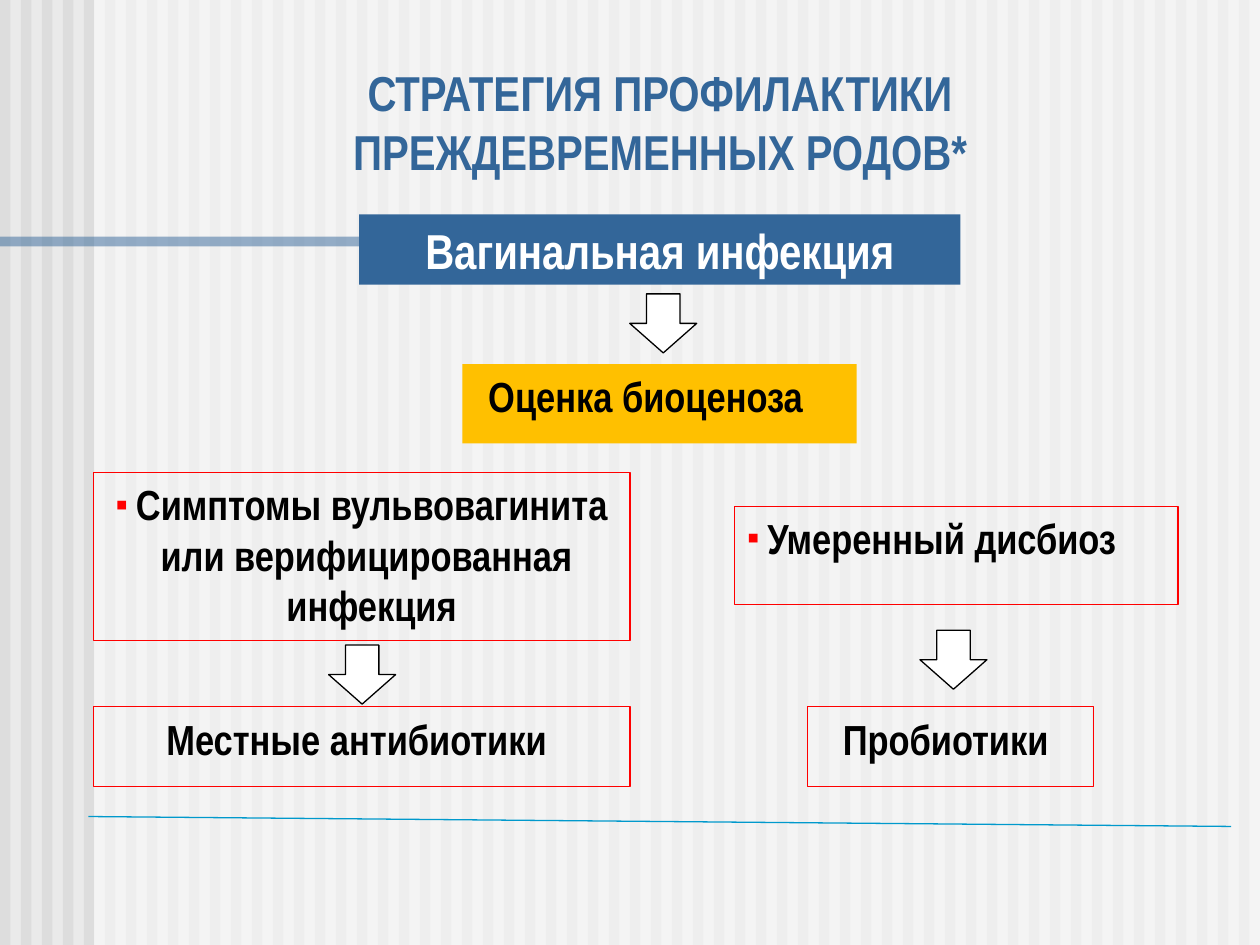
"""Build a slide with a flowchart on preventing preterm birth."""
from pptx import Presentation
from pptx.dml.color import RGBColor
from pptx.enum.shapes import MSO_CONNECTOR as Connector, MSO_SHAPE as Preset
from pptx.enum.text import MSO_ANCHOR as Anchor, MSO_AUTO_SIZE as AutoSize, PP_ALIGN as Align
from pptx.oxml.ns import qn
from pptx.util import Cm, Pt
from lxml.etree import SubElement

COLORS = {
    "background": "EAEAEA", "stripe": "DDDDDD", "white": "FFFFFF", "blue": "336699",
    "line": "0099CC", "amber": "FFC000", "red": "FF0000", "black": "000000",
}
FONT = "Arial Narrow"
WIDTH, HEIGHT = 25.4, 19.05
STRIPE_COUNT, STRIPE_WIDTH = 60, 0.21
INSET = 0.25

TITLE = ("СТРАТЕГИЯ ПРОФИЛАКТИКИ ПРЕЖДЕВРЕМЕННЫХ РОДОВ*", (2.84, 1.12, 20.93, 2.64))
INFECTION = ("Вагинальная инфекция", (7.24, 4.32, 12.12, 1.42))
BOXES = [
    {"lines": [("Оценка биоценоза", 0)], "at": (9.32, 7.34, 7.95, 1.6),
     "fill": "amber", "right": 0.56},
    {"lines": [("Умеренный дисбиоз", 0)], "at": (14.81, 10.21, 8.94, 1.98),
     "bullet": True, "align": Align.LEFT},
    {"lines": [("Симптомы вульвовагинита", 0), ("или верифицированная", 0.2), ("инфекция", 0.4)],
     "at": (1.88, 9.53, 10.82, 3.38), "bullet": True},
    {"lines": [("Пробиотики", 0)], "at": (16.28, 14.25, 5.77, 1.6), "right": 0.2},
    {"lines": [("Местные антибиотики", 0)], "at": (1.88, 14.25, 10.82, 1.6), "right": 0.2},
]
ARROW_CENTERS = [(13.37, 6.52), (7.3, 13.6), (19.22, 13.3)]
ARROW_SIZE = (1.19, 1.35)
FOOTER_LINE = (1.78, 16.46, 24.82, 16.66)


def color(name):
    return RGBColor.from_string(COLORS[name])


def lengths(values):
    return [Cm(value) for value in values]


def add_shape(slide, preset, at, fill=None, line=None, alpha=None):
    shape = slide.shapes.add_shape(preset, *lengths(at))
    shape.shadow.inherit = False
    if fill:
        shape.fill.solid()
        shape.fill.fore_color.rgb = color(fill)
    else:
        shape.fill.background()
    if line:
        shape.line.color.rgb = color(line)
        shape.line.width = Pt(0.75)
    else:
        shape.line.fill.background()
    if alpha:
        fill_color = shape._element.spPr.find(qn("a:solidFill"))[0]
        SubElement(fill_color, qn("a:alpha"), val=str(alpha * 1000))
    return shape


def style(paragraph, size, name, align=Align.CENTER):
    paragraph.alignment = align
    font = paragraph.font
    font.name, font.size, font.bold = FONT, Pt(size), True
    font.color.rgb = color(name)


def set_bullet(paragraph, character=None):
    properties = paragraph._p.get_or_add_pPr()
    properties.set("marL", "0")
    properties.set("indent", "0")
    default = properties.find(qn("a:defRPr"))
    if character:
        bullet_color = SubElement(properties, qn("a:buClr"))
        SubElement(bullet_color, qn("a:srgbClr"), val=COLORS["red"])
        SubElement(properties, qn("a:buFont"), typeface="Arial")
        SubElement(properties, qn("a:buChar"), char=character)
    else:
        SubElement(properties, qn("a:buNone"))
    if default is not None:
        properties.append(default)


def add_background(slide):
    slide.background.fill.solid()
    slide.background.fill.fore_color.rgb = color("background")
    pitch = WIDTH / STRIPE_COUNT
    for index in range(STRIPE_COUNT):
        add_shape(slide, Preset.RECTANGLE, (index * pitch, 0, STRIPE_WIDTH, HEIGHT), "stripe")
    add_shape(slide, Preset.RECTANGLE, (1.9, 0, WIDTH - 1.9, HEIGHT), "white", alpha=50)
    add_shape(slide, Preset.RECTANGLE, (0, 4.77, 19.3, 0.2), "blue", alpha=50)


def fill_placeholder(slide, placeholder, content, text_color, anchor):
    text, at = content
    slide.shapes._spTree.append(placeholder._element)
    placeholder.left, placeholder.top, placeholder.width, placeholder.height = lengths(at)
    frame = placeholder.text_frame
    frame.text = text
    frame.word_wrap, frame.auto_size, frame.vertical_anchor = True, AutoSize.NONE, anchor
    style(frame.paragraphs[0], 28, text_color)


def add_box(slide, lines, at, fill=None, right=0, bullet=False, align=Align.CENTER):
    shape = add_shape(slide, Preset.RECTANGLE, at, fill, None if fill else "red")
    frame = shape.text_frame
    frame.word_wrap, frame.vertical_anchor = True, Anchor.TOP
    frame.margin_right = Cm(INSET + right)
    for index, (text, indent) in enumerate(lines):
        paragraph = frame.add_paragraph() if index else frame.paragraphs[0]
        style(paragraph, 24, "black", align)
        if bullet and index == 0:
            set_bullet(paragraph, "▪")
            space = paragraph.add_run()
            space.text, space.font.size, space.font.bold = " ", Pt(20), False
        elif indent:
            paragraph._p.get_or_add_pPr().set("marL", str(Cm(indent)))
        paragraph.add_run().text = text


def add_arrow(slide, center):
    width, height = ARROW_SIZE
    at = (center[0] - width / 2, center[1] - height / 2, width, height)
    add_shape(slide, Preset.RIGHT_ARROW, at, "white", "black").rotation = 90


def main():
    presentation = Presentation()
    presentation.slide_width, presentation.slide_height = lengths((WIDTH, HEIGHT))
    slide = presentation.slides.add_slide(presentation.slide_layouts[1])
    add_background(slide)

    title, body = slide.shapes.title, slide.placeholders[1]
    fill_placeholder(slide, title, TITLE, "blue", Anchor.BOTTOM)
    fill_placeholder(slide, body, INFECTION, "white", Anchor.TOP)
    set_bullet(body.text_frame.paragraphs[0])
    body.fill.solid()
    body.fill.fore_color.rgb = color("blue")

    line = slide.shapes.add_connector(Connector.STRAIGHT, *lengths(FOOTER_LINE))
    line.line.color.rgb = color("line")
    line.line.width = Pt(0.75)
    SubElement(line._element.spPr, qn("a:effectLst"))

    for box in BOXES:
        add_box(slide, **box)
    for center in ARROW_CENTERS:
        add_arrow(slide, center)
    presentation.save("out.pptx")


if __name__ == "__main__":
    main()
